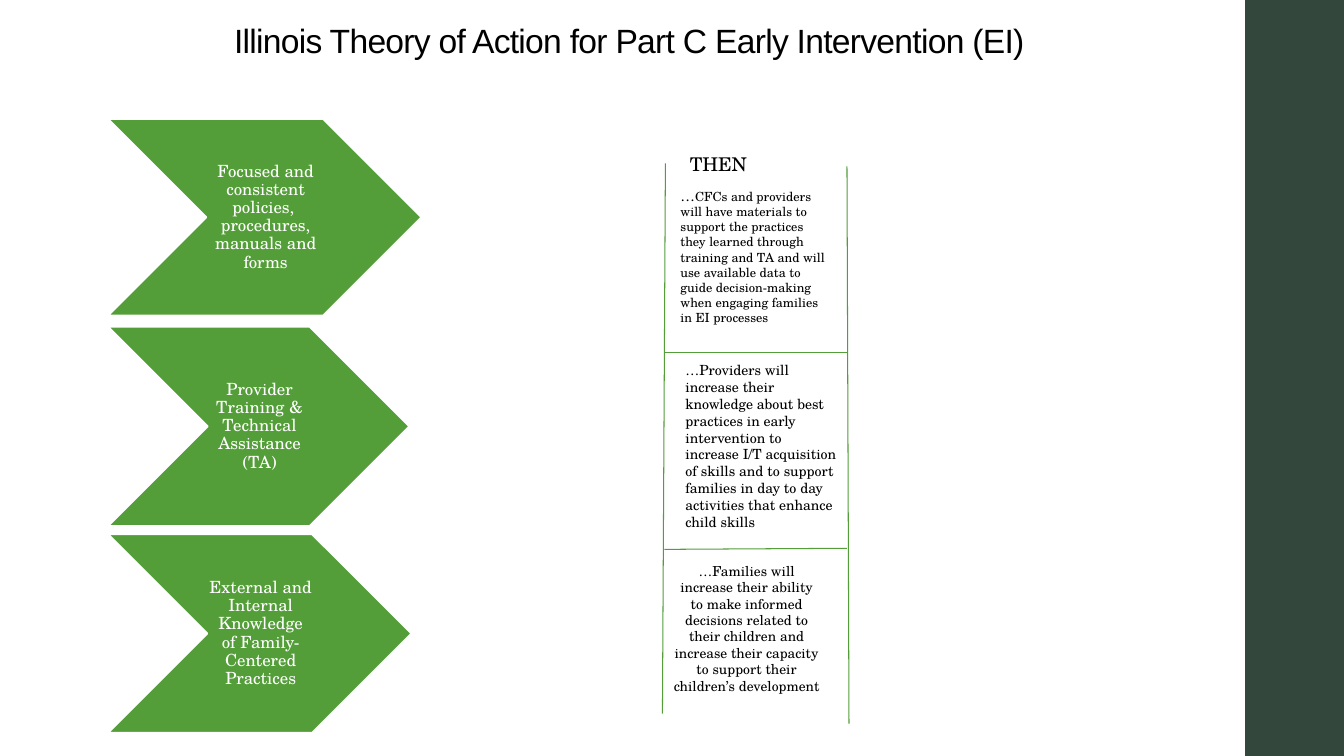
from lxml.etree import SubElement
from pptx import Presentation
from pptx.dml.color import RGBColor
from pptx.enum.shapes import MSO_CONNECTOR as CONN, MSO_SHAPE as SHAPE
from pptx.enum.text import MSO_ANCHOR as ANCHOR, PP_ALIGN as ALIGN
from pptx.oxml.ns import qn
from pptx.util import Inches, Pt

GREEN, DARK, WHITE, BLACK = "549E39", "34473D", "FFFFFF", "000000"
SERIF, SANS = "TeX Gyre Schola", "Arial"


def rgb(value):
    return RGBColor.from_string(value)


class Board:
    """Draws on one slide; lengths are percent of its width and height."""

    def __init__(self, prs):
        self.width, self.height = prs.slide_width, prs.slide_height
        self.shapes = prs.slides.add_slide(prs.slide_layouts[6]).shapes

    def x(self, share):
        return round(self.width * share / 100)

    def y(self, share):
        return round(self.height * share / 100)

    def box(self, left, top, width, height):
        return self.x(left), self.y(top), self.x(width), self.y(height)

    def shape(self, kind, box, fill, line=None):
        s = self.shapes.add_shape(kind, *self.box(*box))
        s.shadow.inherit = False
        s.fill.solid()
        s.fill.fore_color.rgb = rgb(fill)
        if line:
            s.line.color.rgb = rgb(line)
            s.line.width = Pt(1.35)
        else:
            s.line.fill.background()
        return s

    def fill_text(self, tf, runs, size, color=BLACK, font=SERIF, align=ALIGN.LEFT):
        """Fill a frame with one paragraph and return it."""
        tf.word_wrap = True
        p = tf.paragraphs[0]
        p.alignment = align
        p.font.size, p.font.name = Pt(size), font
        p.font.color.rgb = rgb(color)
        for text in runs:
            p.add_run().text = text
        return p

    def text(self, box, *runs, size, **style):
        tf = self.shapes.add_textbox(*self.box(*box)).text_frame
        return self.fill_text(tf, runs, size, **style)

    def title(self, box, text):
        p = self.text(box, text, size=24, font=SANS, align=ALIGN.CENTER)
        p.line_spacing = 0.9
        p.runs[0]._r.get_or_add_rPr().set("spc", "-50")

    def chevron(self, box, text):
        s = self.shape(SHAPE.CHEVRON, box, GREEN, WHITE)
        tf = s.text_frame
        tf.vertical_anchor = ANCHOR.MIDDLE
        tf.margin_left, tf.margin_right = Inches(0.02), 0
        tf.margin_top = tf.margin_bottom = Inches(0.01)
        p = self.fill_text(tf, [text], 12, WHITE, align=ALIGN.CENTER)
        p.line_spacing = 0.9

    def line(self, x1, y1, x2, y2):
        s = self.shapes.add_connector(
            CONN.STRAIGHT, self.x(x1), self.y(y1), self.x(x2), self.y(y2))
        s.line.color.rgb = rgb(GREEN)
        s.line.width = Pt(0.75)
        SubElement(s._element.spPr, qn("a:effectLst"))


def main():
    prs = Presentation()
    prs.slide_width, prs.slide_height = Inches(13.33), Inches(7.5)
    board = Board(prs)

    board.shape(SHAPE.RECTANGLE, (92.65, 0, 7.35, 100), DARK)
    board.title((14.48, 2.53, 64.67, 7.33),
                "Illinois Theory of Action for Part C Early Intervention (EI)")

    strands = [
        (23.33, 26, "Focused and consistent policies,  procedures, manuals and forms"),
        (22.43, 26.4, "Provider Training & Technical Assistance (TA)"),
        (22.58, 26.27, "External and Internal Knowledge of Family-Centered Practices"),
    ]
    for row, (width, height, text) in enumerate(strands):
        board.chevron((8.03, 15.73 + 27.47 * row, width, height), text)

    for ends in [(49.51, 21.6, 49.29, 94.4), (63.02, 22, 63.17, 95.73),
                 (49.44, 46.67, 63.02, 46.67), (49.44, 72.67, 63.02, 72.53)]:
        board.line(*ends)

    board.text((50.04, 19.47, 6.83, 4.4), "THEN", size=13.5, align=ALIGN.CENTER)
    p = board.text(
        (49.89, 24, 12.23, 19.87), "…",
        "CFCs and providers will have materials to support the practices they "
        "learned through training and TA and will use available data to guide "
        "decision-making when engaging families in EI processes", size=9)
    p.runs[0].font.size = Pt(10.5)
    board.text(
        (50.26, 47.2, 12.75, 23.87),
        "…Providers will increase their knowledge about best practices in early "
        "intervention to increase I/T acquisition of skills and to support "
        "families in day to day activities that enhance child skills", size=10)
    board.text(
        (49.29, 73.73, 12.53, 18.8),
        "…Families will increase their ability to make informed decisions "
        "related to their children and increase their capacity to support "
        "their children’s development", size=9.8, align=ALIGN.CENTER)

    prs.save("out.pptx")


if __name__ == "__main__":
    main()
